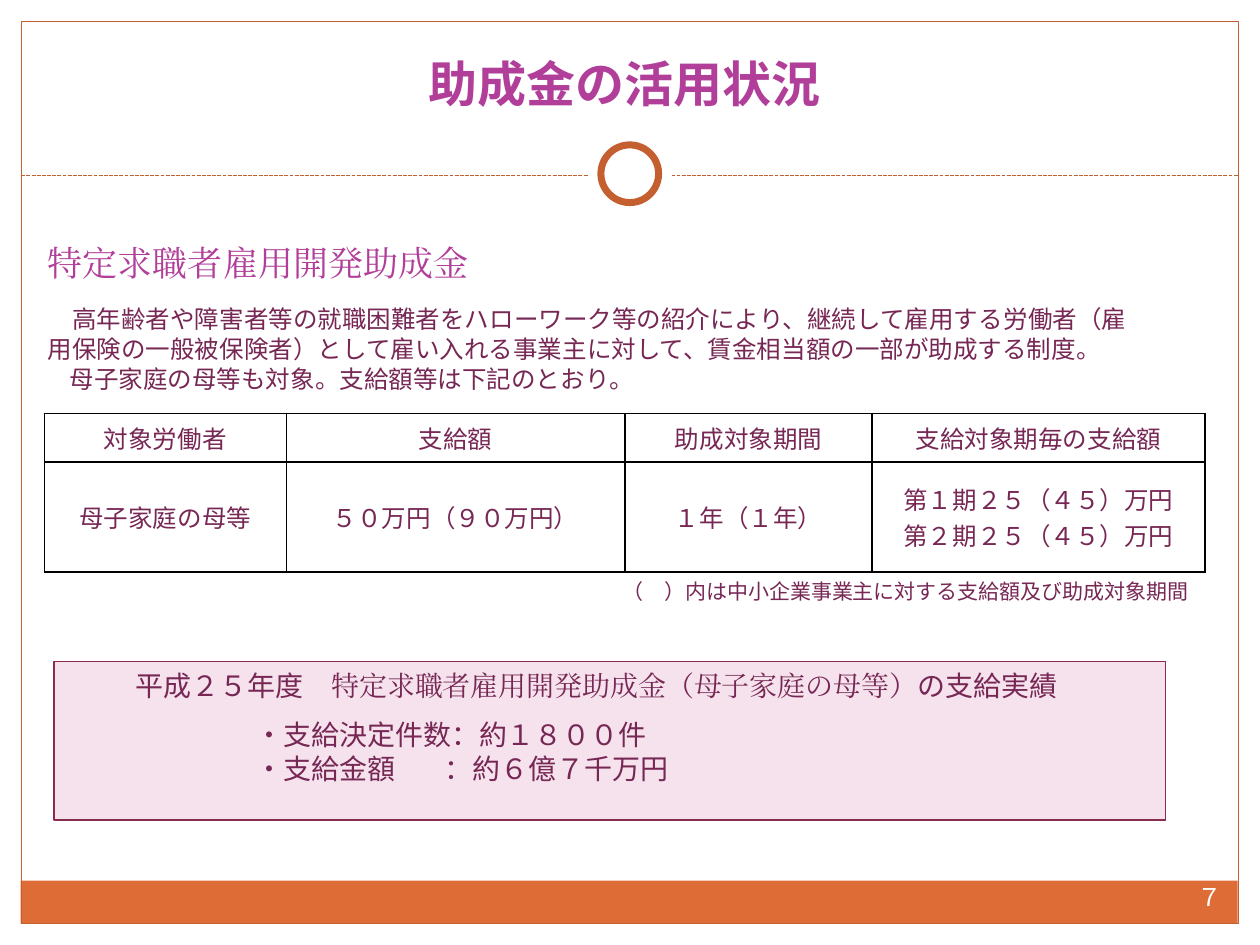
"""Build the slide on how the employment grant is used."""
from dataclasses import dataclass

from lxml.etree import SubElement
from pptx import Presentation
from pptx.dml.color import RGBColor
from pptx.enum.dml import MSO_LINE
from pptx.enum.shapes import MSO_CONNECTOR, MSO_SHAPE
from pptx.enum.text import MSO_ANCHOR, MSO_AUTO_SIZE, PP_ALIGN
from pptx.oxml.ns import qn
from pptx.util import Pt


@dataclass(frozen=True)
class Theme:
    """Colours, fonts and type sizes."""
    white: str = "FFFFFF"
    black: str = "000000"
    rust: str = "C45F30"
    orange: str = "DE6C36"
    purple: str = "B13F9A"
    plum: str = "772754"
    pink: str = "F5E2ED"
    wine: str = "882D4D"
    sans: str = "Noto Sans CJK JP"
    serif: str = "Cambria"
    arial: str = "Arial"
    title: float = 28
    head: float = 20
    large: float = 16
    text: float = 14
    note: float = 12
    lead: float = 1.22


THEME = Theme()


@dataclass(frozen=True)
class Box:
    """A place on the slide in points."""
    left: float
    top: float
    width: float
    height: float

    def place(self) -> tuple:
        """Give the place as lengths."""
        return Pt(self.left), Pt(self.top), Pt(self.width), Pt(self.height)


@dataclass(frozen=True)
class Span:
    """A run of text in one style."""
    text: str
    size: float = THEME.text
    font: str = THEME.sans
    color: str = THEME.plum
    bold: bool = False


@dataclass(frozen=True)
class Para:
    """A paragraph made of spans."""
    spans: tuple
    align: PP_ALIGN = PP_ALIGN.LEFT
    before: float = 0
    indent: float = 0
    tab: float = 0


@dataclass(frozen=True)
class Form:
    """A preset shape with its paint."""
    kind: MSO_SHAPE
    box: Box
    fill: str = ""
    line: str = ""
    weight: float = 0.75


def write(frame, paras: list, fixed: bool = True) -> None:
    """Write paragraphs run by run into a text frame."""
    for i, para in enumerate(paras):
        p = frame.paragraphs[0] if i == 0 else frame.add_paragraph()
        p.alignment = para.align
        p.space_before = Pt(para.before)
        if fixed:
            p.line_spacing = Pt(round(para.spans[0].size * THEME.lead, 1))
        props = p._p.get_or_add_pPr()
        props.set("marL", "0")
        props.set("indent", str(Pt(para.indent)))
        SubElement(props, qn("a:buNone"))
        if para.tab:
            stops = SubElement(props, qn("a:tabLst"))
            SubElement(stops, qn("a:tab"), pos=str(Pt(para.tab)), algn="l")
        for span in para.spans:
            run = p.add_run()
            run.text = span.text
            font = run.font
            font.size, font.bold, font.name = Pt(span.size), span.bold, span.font
            font.color.rgb = RGBColor.from_string(span.color)
            SubElement(run._r.get_or_add_rPr(), qn("a:ea"), typeface=span.font)


def setup(shape, box: Box, paras: list, anchor: MSO_ANCHOR = MSO_ANCHOR.TOP) -> None:
    """Place a text shape and fill it."""
    shape.left, shape.top, shape.width, shape.height = box.place()
    frame = shape.text_frame
    frame.word_wrap = True
    frame.auto_size = MSO_AUTO_SIZE.NONE
    frame.vertical_anchor = anchor
    write(frame, paras)


def label(slide, box: Box, paras: list, anchor: MSO_ANCHOR = MSO_ANCHOR.TOP) -> None:
    """Add a text box."""
    setup(slide.shapes.add_textbox(*box.place()), box, paras, anchor)


def draw(slide, form: Form) -> None:
    """Add a preset shape."""
    shape = slide.shapes.add_shape(form.kind, *form.box.place())
    shape.shadow.inherit = False
    if form.fill:
        shape.fill.solid()
        shape.fill.fore_color.rgb = RGBColor.from_string(form.fill)
    else:
        shape.fill.background()
    if form.line:
        shape.line.color.rgb = RGBColor.from_string(form.line)
        shape.line.width = Pt(form.weight)
    else:
        shape.line.fill.background()


def rule(slide, left: float, right: float, y: float) -> None:
    """Add a dashed level line."""
    line = slide.shapes.add_connector(MSO_CONNECTOR.STRAIGHT, Pt(left), Pt(y), Pt(right), Pt(y))
    line.line.color.rgb = RGBColor.from_string(THEME.rust)
    line.line.width = Pt(0.75)
    line.line.dash_style = MSO_LINE.SQUARE_DOT
    SubElement(line._element.spPr, qn("a:effectLst"))


def edge(cell) -> None:
    """Draw all four borders of a cell."""
    props = cell._tc.get_or_add_tcPr()
    for side in ("lnL", "lnR", "lnT", "lnB"):
        line = SubElement(props, qn(f"a:{side}"), w=str(Pt(1)))
        SubElement(SubElement(line, qn("a:solidFill")), qn("a:srgbClr"), val=THEME.black)


def grid(slide, box: Box, wide: list, high: list, rows: list) -> None:
    """Add the grant table."""
    table = slide.shapes.add_table(len(rows), len(wide), *box.place()).table
    table.first_row = table.horz_banding = False
    for col, width in zip(table.columns, wide):
        col.width = Pt(width)
    for row, height, texts in zip(table.rows, high, rows):
        row.height = Pt(height)
        for cell, lines in zip(row.cells, texts):
            edge(cell)
            cell.fill.background()
            cell.vertical_anchor = MSO_ANCHOR.MIDDLE
            cell.margin_left = cell.margin_right = Pt(5)
            cell.margin_top = cell.margin_bottom = Pt(0)
            write(cell.text_frame,
                  [Para((Span(text),), PP_ALIGN.CENTER) for text in lines.split("\n")], False)


def main() -> None:
    """Build and save the slide."""
    deck = Presentation()
    deck.slide_width, deck.slide_height = Pt(720), Pt(540)
    slide = deck.slides.add_slide(deck.slide_layouts[1])
    rect, oval = MSO_SHAPE.RECTANGLE, MSO_SHAPE.OVAL
    draw(slide, Form(rect, Box(11.8, 503.3, 695.5, 24.5), THEME.orange))
    draw(slide, Form(rect, Box(12.2, 12.2, 695.5, 515.5), line=THEME.rust))
    rule(slide, 12.2, 707.7, 100.5)
    draw(slide, Form(oval, Box(336, 75.6, 48, 48), THEME.white))
    draw(slide, Form(oval, Box(343.4, 82.8, 33, 33), THEME.white, THEME.rust, 4))
    draw(slide, Form(rect, Box(31, 378, 635, 90.7), THEME.pink, THEME.wine, 0.9))

    setup(slide.shapes.title, Box(36, 21.6, 641.5, 46), [
        Para((Span("助成金の活用状況", THEME.title, color=THEME.purple, bold=True),),
             PP_ALIGN.CENTER)], MSO_ANCHOR.BOTTOM)
    label(slide, Box(677.5, 500.4, 31.7, 28.8), [Para((Span("７", color=THEME.white),))])
    label(slide, Box(20.2, 134, 635, 94.3), [
        Para((Span("特定求職者雇用開発助成金", THEME.head, THEME.serif, THEME.purple),)),
        Para((Span("高年齢者や障害者等の就職困難者をハローワーク等の紹介により、継続して雇用する",
                   font=THEME.arial),
              Span("労働者（雇用保険の一般被保険者）として雇い入れる事業主に対して、"
                   "賃金相当額の一部が助成する制度。")), before=12, indent=14),
        Para((Span("母子家庭の母等も対象。支給額等は下記のとおり。", font=THEME.arial),),
             indent=12.5)], MSO_ANCHOR.MIDDLE)
    label(slide, Box(348.5, 327, 351.4, 21.6), [
        Para((Span("（　）内は中小企業事業主に対する支給額及び助成対象期間", THEME.note),))],
        MSO_ANCHOR.MIDDLE)
    label(slide, Box(70.6, 378, 584, 26.6), [
        Para((Span("平成２５年度　", THEME.large),
              Span("特定求職者雇用開発助成金（母子家庭の母等）", THEME.large, THEME.serif),
              Span("の支給実績", THEME.large)))])
    grid(slide, Box(25.4, 236.2, 663.2, 90.7), [138.2, 193.7, 141.1, 190.2], [27.8, 62.9], [
        ["対象労働者", "支給額", "助成対象期間", "支給対象期毎の支給額"],
        ["母子家庭の母等", "５０万円（９０万円）", "１年（１年）",
         "第１期２５（４５）万円\n第２期２５（４５）万円"]])
    facts = slide.placeholders[1]
    setup(facts, Box(139, 406, 360, 46), [
        Para((Span(text, THEME.large),), tab=7 * THEME.large)
        for text in ("・支給決定件数：約１８００件", "・支給金額\t：約６億７千万円")])
    facts.element.getparent().append(facts.element)
    deck.save("out.pptx")


if __name__ == "__main__":
    main()
